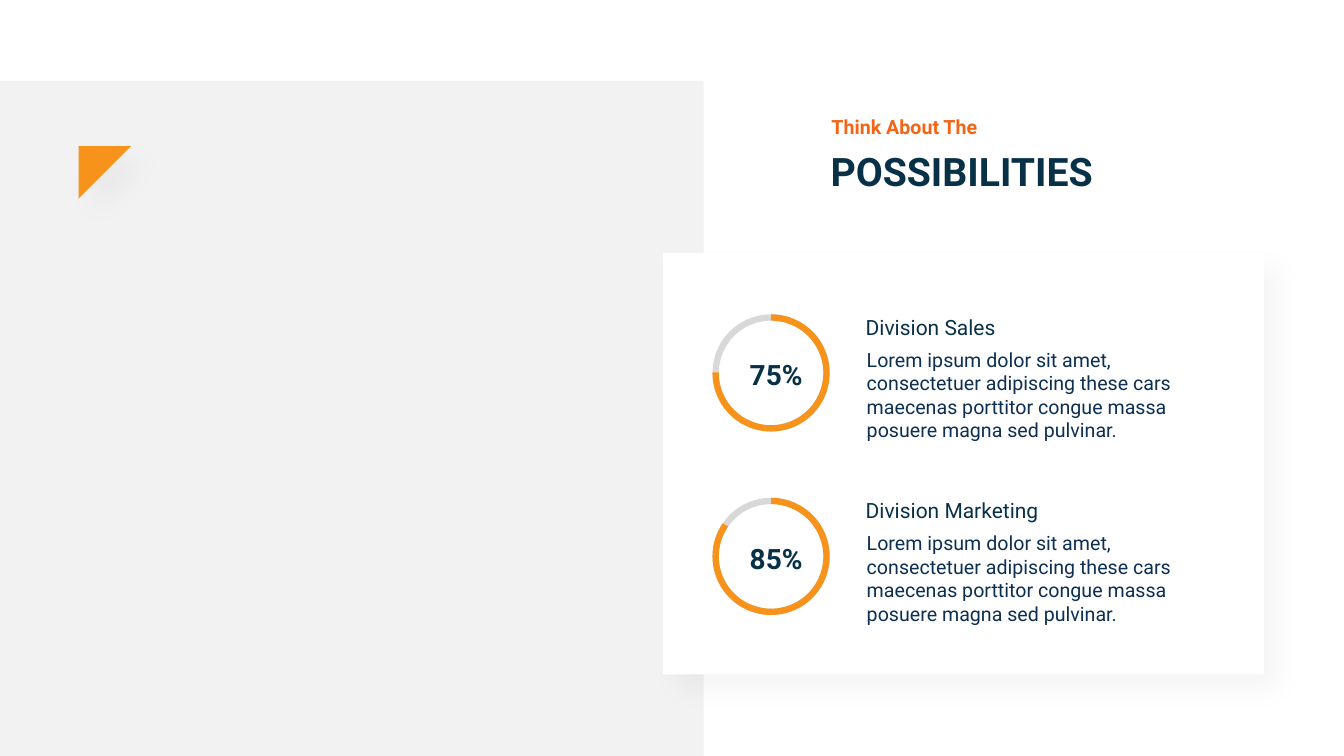
from lxml import etree
from pptx import Presentation
from pptx import util as u
from pptx.dml.color import RGBColor
from pptx.enum import shapes, text
from pptx.oxml import ns

PX = 9144
NAVY = RGBColor(0x08, 0x31, 0x48)
BODY_BLUE = RGBColor(0x0D, 0x2F, 0x51)
RED_ORANGE = RGBColor(0xF2, 0x65, 0x13)
ORANGE = RGBColor(0xF7, 0x93, 0x1B)
WHITE = RGBColor(0xFF, 0xFF, 0xFF)
PALE_GREY = RGBColor(0xF2, 0xF2, 0xF2)
RING_GREY = RGBColor(0xD8, 0xD8, 0xD8)
BLURB = ("Lorem ipsum dolor sit amet, consectetuer adipiscing these cars "
         "maecenas porttitor congue massa posuere magna sed pulvinar.")


def write(words, box, size, color=NAVY, bold=False, align=text.PP_ALIGN.LEFT, shape=None):
    left, top, width, height = (n * PX for n in box)
    if shape is None:
        shape = slide.shapes.add_textbox(left, top, width, height)
    shape.left, shape.top, shape.width, shape.height = left, top, width, height
    frame = shape.text_frame
    frame.text = words
    frame.word_wrap = True
    frame.auto_size = text.MSO_AUTO_SIZE.SHAPE_TO_FIT_TEXT
    frame.vertical_anchor = text.MSO_ANCHOR.TOP
    paragraph = frame.paragraphs[0]
    paragraph.alignment = align
    font = paragraph.runs[0].font
    font.name, font.size, font.bold = "Roboto", u.Pt(size), bold
    font.color.rgb = color


def add_block(kind, box, color, shadow=False):
    shape = slide.shapes.add_shape(kind, *(n * PX for n in box))
    shape.fill.solid()
    shape.fill.fore_color.rgb = color
    shape.line.fill.background()
    shape.shadow.inherit = False
    if shadow:
        effects = shape._element.spPr.find(ns.qn("a:effectLst"))
        outer = etree.SubElement(effects, ns.qn("a:outerShdw"), blurRad=str(u.Pt(18)),
                                 dist=str(u.Pt(15)), dir="2700000", algn="tl", rotWithShape="0")
        black = etree.SubElement(outer, ns.qn("a:srgbClr"), val="000000")
        etree.SubElement(black, ns.qn("a:alpha"), val="4000")
    return shape


presentation = Presentation()
presentation.slide_width, presentation.slide_height = u.Inches(13.333), u.Inches(7.5)
slide = presentation.slides.add_slide(presentation.slide_layouts[5])

add_block(shapes.MSO_SHAPE.RECTANGLE, (0, 80, 698, 670), PALE_GREY)
add_block(shapes.MSO_SHAPE.RECTANGLE, (658, 251, 596, 418), WHITE, shadow=True)
write("POSSIBILITIES", (814, 141, 441, 57), 28, bold=True, shape=slide.shapes.title)
write("Think About The", (815, 109, 222, 34), 14, RED_ORANGE, bold=True)
triangle = add_block(shapes.MSO_SHAPE.RIGHT_TRIANGLE, (78, 145, 52, 52), ORANGE, shadow=True)
triangle.rotation = 90

divisions = [("Division Sales", "75%", 315, 108.33),
             ("Division Marketing", "85%", 497, 128.77)]
for name, share, top, arc_end in divisions:
    write(BLURB, (850, top + 25, 369, 104), 14, BODY_BLUE)
    write(name, (849, top - 8, 264, 35), 15)
    gauge = slide.shapes.add_group_shape()
    for kind, color in ((shapes.MSO_SHAPE.OVAL, RING_GREY), (shapes.MSO_SHAPE.ARC, ORANGE)):
        ring = gauge.shapes.add_shape(kind, 710 * PX, top * PX, 110 * PX, 110 * PX)
        ring.fill.background()
        ring.line.color.rgb = color
        ring.line.width = u.Pt(4.5)
        ring.shadow.inherit = False
    ring.adjustments[0] = 162
    ring.adjustments[1] = arc_end
    write(share, (721, top + 35, 98, 44), 20, bold=True, align=text.PP_ALIGN.CENTER)

presentation.save("out.pptx")
